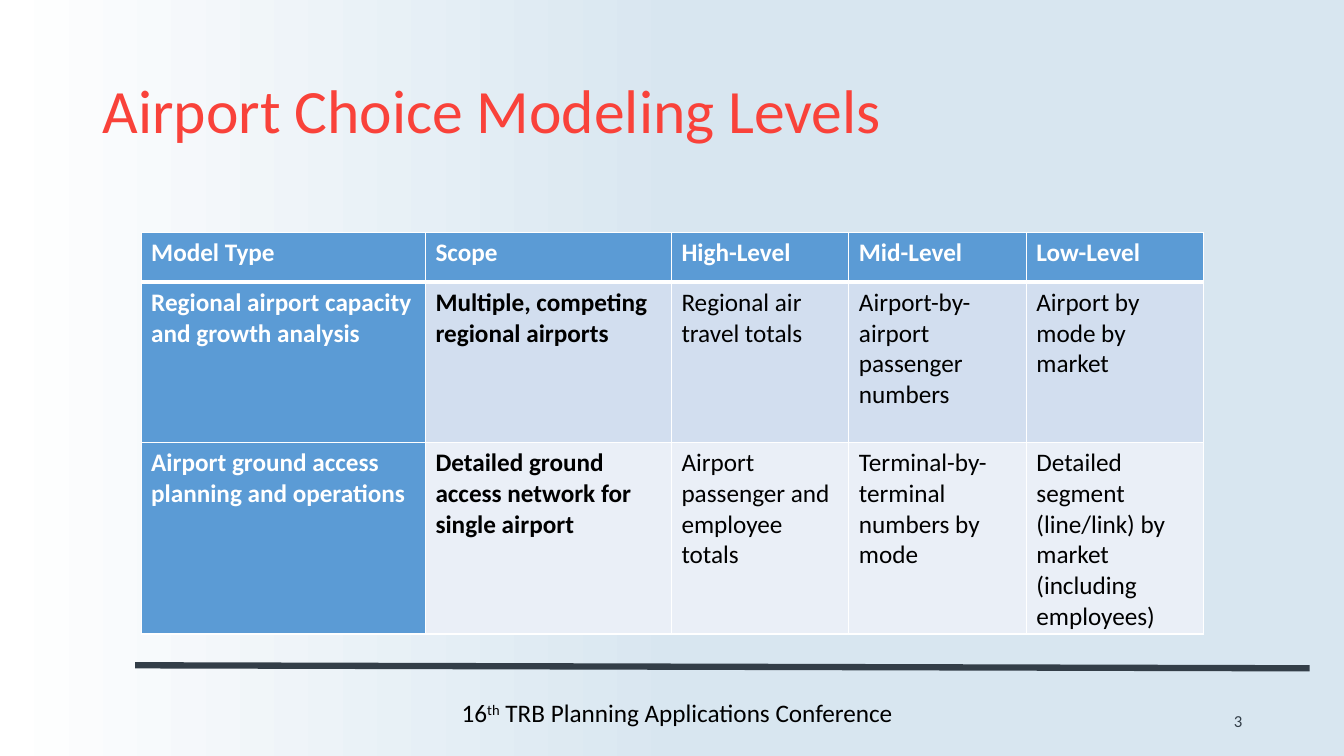
from lxml.etree import SubElement
from copy import deepcopy
from pptx import Presentation
from pptx.dml.color import RGBColor
from pptx.enum.shapes import MSO_CONNECTOR
from pptx.enum.text import MSO_ANCHOR, MSO_AUTO_SIZE, PP_ALIGN
from pptx.oxml.ns import qn
from pptx.util import Inches, Pt

WHITE = RGBColor(0xFF, 0xFF, 0xFF)
BLACK = RGBColor(0, 0, 0)
PALE_BLUE = RGBColor(0xD8, 0xE6, 0xF0)
SLATE = RGBColor(0x33, 0x3E, 0x48)
RED = RGBColor(0xF9, 0x42, 0x3A)
HEADER_BLUE = RGBColor(0x5B, 0x9B, 0xD5)
BAND_FILLS = [RGBColor(0xD2, 0xDE, 0xEF), RGBColor(0xEA, 0xEF, 0xF7)]

FONT = "Calibri"
COLUMN_WIDTHS = [2.82, 2.44, 1.76, 1.76, 1.76]
ROW_HEIGHTS = [0.49, 1.59, 1.59]
LEVELS = [
    ["Model Type", "Scope", "High-Level", "Mid-Level", "Low-Level"],
    ["Regional airport capacity and growth analysis",
     "Multiple, competing regional airports",
     "Regional air travel totals",
     "Airport-by-airport passenger numbers",
     "Airport by mode by market"],
    ["Airport ground access planning and operations",
     "Detailed ground access network for single airport",
     "Airport passenger and employee totals",
     "Terminal-by-terminal numbers by mode",
     "Detailed segment (line/link) by market (including employees)"],
]


def style_run(run, size, color, bold=False):
    run.font.name = FONT
    run.font.size = Pt(size)
    run.font.color.rgb = color
    run.font.bold = bold


def set_background(slide):
    fill = slide.background.fill
    fill.gradient()
    fill.gradient_angle = 0
    for stop, position, color in zip(fill.gradient_stops, (0, 0.51), (WHITE, PALE_BLUE)):
        stop.position = position
        stop.color.rgb = color
    # Hold the pale blue to the right edge
    stops = slide.element.find(".//" + qn("a:gsLst"))
    last_stop = deepcopy(stops[-1])
    last_stop.set("pos", "100000")
    stops.append(last_stop)


def add_text(slide, box, parts, size, color, wrap=True, anchor=MSO_ANCHOR.MIDDLE):
    shape = slide.shapes.add_textbox(*map(Inches, box))
    frame = shape.text_frame
    frame.word_wrap = wrap
    frame.vertical_anchor = anchor
    paragraph = frame.paragraphs[0]
    for part in parts:
        run = paragraph.add_run()
        run.text = part
        style_run(run, size, color)
    return shape


def add_rule(slide, start, end):
    line = slide.shapes.add_connector(MSO_CONNECTOR.STRAIGHT, *map(Inches, start + end))
    line.line.color.rgb = SLATE
    line.line.width = Pt(4.5)
    SubElement(line.element.spPr, qn("a:effectLst"))


def set_borders(cell, widths):
    properties = cell._tc.get_or_add_tcPr()
    for side, width in widths.items():
        border = SubElement(properties, qn("a:ln" + side), w=str(Pt(width)))
        fill = SubElement(border, qn("a:solidFill"))
        SubElement(fill, qn("a:srgbClr"), val=str(WHITE))


def add_levels_table(slide):
    frame = slide.shapes.add_table(
        len(LEVELS), len(COLUMN_WIDTHS), Inches(1.4), Inches(2.31),
        Inches(sum(COLUMN_WIDTHS)), Inches(sum(ROW_HEIGHTS)))
    table = frame.table
    table.first_col = True
    for column, width in zip(table.columns, COLUMN_WIDTHS):
        column.width = Inches(width)
    for row, height in zip(table.rows, ROW_HEIGHTS):
        row.height = Inches(height)

    for row, texts in enumerate(LEVELS):
        for column, text in enumerate(texts):
            cell = table.cell(row, column)
            is_heading = row == 0 or column == 0
            set_borders(cell, {"L": 1, "R": 1,
                               "T": 3 if row == 1 else 1,
                               "B": 3 if row == 0 else 1})
            cell.fill.solid()
            cell.fill.fore_color.rgb = HEADER_BLUE if is_heading else BAND_FILLS[row - 1]
            cell.text_frame.text = text
            style_run(cell.text_frame.paragraphs[0].runs[0], 18,
                      WHITE if is_heading else BLACK, is_heading or column == 1)


def main():
    presentation = Presentation()
    presentation.slide_width = Inches(13.33)
    presentation.slide_height = Inches(7.5)
    slide = presentation.slides.add_slide(presentation.slide_layouts[6])
    set_background(slide)

    # Footer rule and conference name
    add_rule(slide, (1.34, 6.6), (12.99, 6.63))
    footer = add_text(slide, (4.48, 6.87, 4.62, 0.4),
                      ["16", "th", " TRB Planning Applications Conference"],
                      18, BLACK, wrap=False, anchor=MSO_ANCHOR.TOP)
    footer.text_frame.auto_size = MSO_AUTO_SIZE.SHAPE_TO_FIT_TEXT
    ordinal = footer.text_frame.paragraphs[0].runs[1]
    ordinal.font._element.set("baseline", "30000")

    # Title
    title = add_text(slide, (0.92, 0.4, 11.5, 1.45),
                     ["Airport Choice Modeling Levels"], 44, RED)
    title.text_frame.paragraphs[0].line_spacing = 0.9

    # Slide number
    number = add_text(slide, (9.42, 6.95, 3, 0.4), ["3"], 12, SLATE)
    number.text_frame.paragraphs[0].alignment = PP_ALIGN.RIGHT

    # Modeling levels
    add_levels_table(slide)
    presentation.save("out.pptx")


if __name__ == "__main__":
    main()
